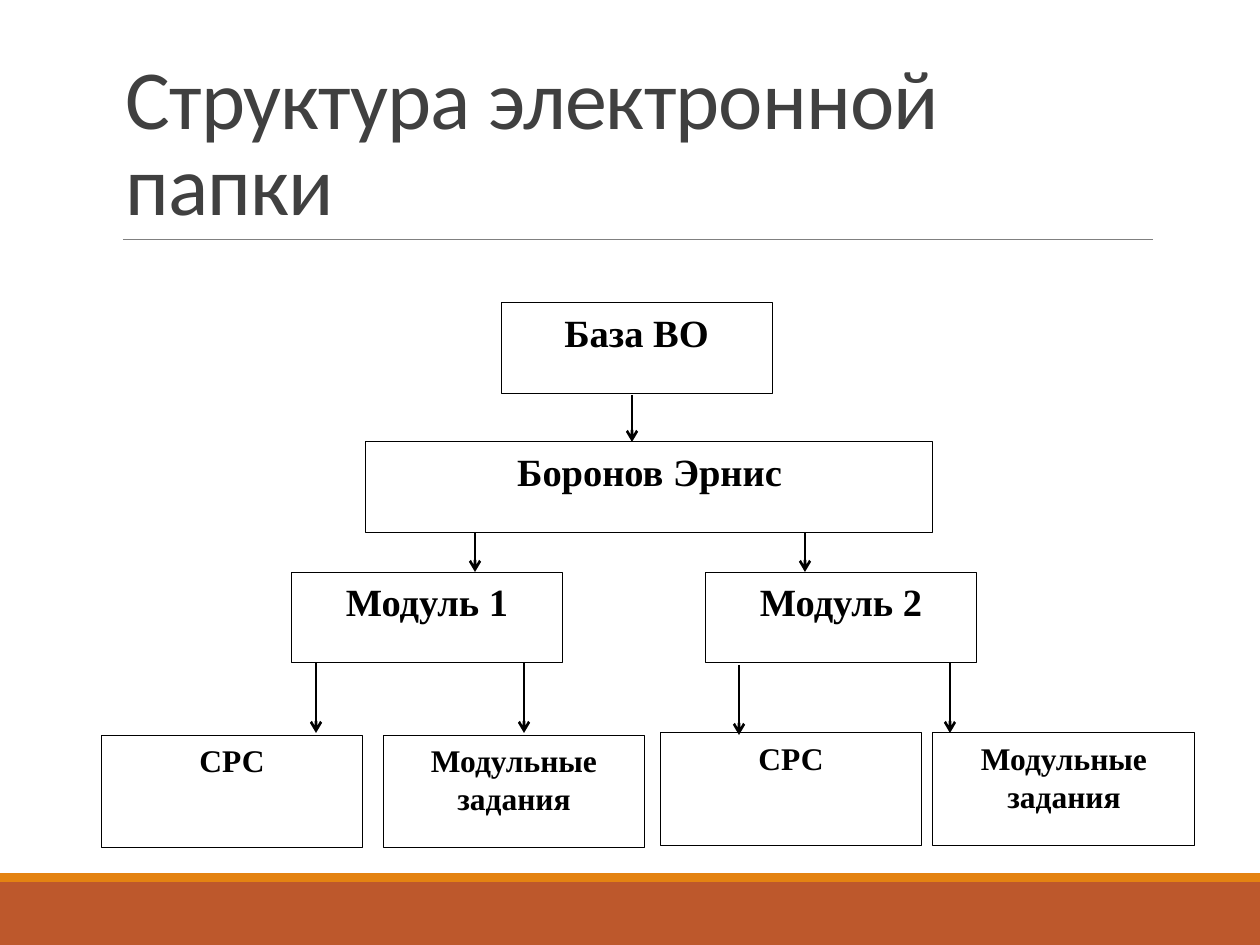
from lxml import etree
from pptx import Presentation
from pptx.dml.color import RGBColor
from pptx.enum.shapes import MSO_CONNECTOR, MSO_SHAPE
from pptx.enum.text import MSO_ANCHOR, PP_ALIGN
from pptx.oxml.ns import qn
from pptx.util import Pt

RECTANGLE = MSO_SHAPE.RECTANGLE
STRAIGHT = MSO_CONNECTOR.STRAIGHT
CENTER, LEFT = PP_ALIGN.CENTER, PP_ALIGN.LEFT
TOP, BOTTOM = MSO_ANCHOR.TOP, MSO_ANCHOR.BOTTOM

WHITE = RGBColor(0xFF, 0xFF, 0xFF)
BLACK = RGBColor(0, 0, 0)
TITLE_GRAY = RGBColor(0x40, 0x40, 0x40)
RULE_GRAY = RGBColor(0x80, 0x80, 0x80)
RUST = RGBColor(0xBD, 0x58, 0x2C)
ORANGE = RGBColor(0xE4, 0x83, 0x12)

PX_PER_INCH = 126
SLIDE_W, SLIDE_H = 1260, 945


def px(*lengths):
    return [round(length * 914400 / PX_PER_INCH) for length in lengths]


class SlideBuilder:
    title_font = "Calibri"
    box_font = "Times New Roman"

    def __init__(self, slide):
        self.slide = slide
        self.shapes = slide.shapes

    def start_group(self):
        self.shapes = self.slide.shapes.add_group_shape().shapes

    def title(self, text, *frame):
        title = self.slide.shapes.title
        title.left, title.top, title.width, title.height = px(*frame)
        text_frame = title.text_frame
        text_frame.text = text
        text_frame.word_wrap = True
        text_frame.vertical_anchor = BOTTOM
        paragraph = text_frame.paragraphs[0]
        paragraph.alignment = LEFT
        paragraph.line_spacing = 0.85
        font = paragraph.font
        font.name, font.size = self.title_font, Pt(48)
        font.color.rgb = TITLE_GRAY
        paragraph.runs[0].font._element.set("spc", "-50")

    def band(self, color, *frame):
        band = self.shapes.add_shape(RECTANGLE, *px(*frame))
        band.shadow.inherit = False
        band.fill.solid()
        band.fill.fore_color.rgb = color
        band.line.fill.background()
        return band

    def box(self, text, size, *frame):
        box = self.band(WHITE, *frame)
        box.line.color.rgb = BLACK
        box.line.width = Pt(0.5)
        text_frame = box.text_frame
        text_frame.text = text
        text_frame.word_wrap = True
        text_frame.vertical_anchor = TOP
        paragraph = text_frame.paragraphs[0]
        paragraph.alignment = CENTER
        paragraph.space_after = Pt(10)
        font = paragraph.font
        font.name, font.size, font.bold = self.box_font, Pt(size), True
        font.color.rgb = BLACK

    def line(self, color, width, *ends):
        line = self.shapes.add_connector(STRAIGHT, *px(*ends))
        line.line.color.rgb = color
        line.line.width = Pt(width)
        etree.SubElement(line._element.spPr, qn("a:effectLst"))
        return line

    def arrow_down(self, x, top, bottom):
        arrow = self.line(BLACK, 1.5, x, top, x, bottom)
        outline = arrow.line._get_or_add_ln()
        etree.SubElement(outline, qn("a:tailEnd"), type="arrow")


def main():
    deck = Presentation()
    deck.slide_width, deck.slide_height = px(SLIDE_W, SLIDE_H)
    title_only = deck.slide_layouts[5]
    builder = SlideBuilder(deck.slides.add_slide(title_only))

    # Footer bands and title with its rule
    builder.band(RUST, 0, 882, SLIDE_W, 63)
    builder.band(ORANGE, 0, 873, SLIDE_W, 9)
    builder.line(RULE_GRAY, 0.5, 123, 239, 1153, 239)
    builder.title("Структура электронной папки", 113, 39, 1040, 200)

    # Folder levels: database, person, modules
    builder.start_group()
    for text, left, top, width in (
        ("База ВО", 501, 303, 271),
        ("Боронов Эрнис", 366, 442, 567),
        ("Модуль 1", 291, 572, 272),
        ("Модуль 2", 705, 572, 272),
    ):
        builder.box(text, 22, left, top, width, 91)

    # Contents of each module
    for text, left, top in (
        ("СРС", 101, 735),
        ("Модульные задания", 383, 735),
        ("СРС", 660, 733),
        ("Модульные задания", 933, 733),
    ):
        builder.box(text, 18, left, top, 262, 113)

    # Arrows between levels
    for x, top, bottom in (
        (632, 395, 442),
        (475, 533, 572),
        (805, 533, 572),
        (316, 663, 733),
        (524, 663, 733),
        (739, 665, 735),
        (950, 663, 733),
    ):
        builder.arrow_down(x, top, bottom)

    deck.save("out.pptx")


if __name__ == "__main__":
    main()
